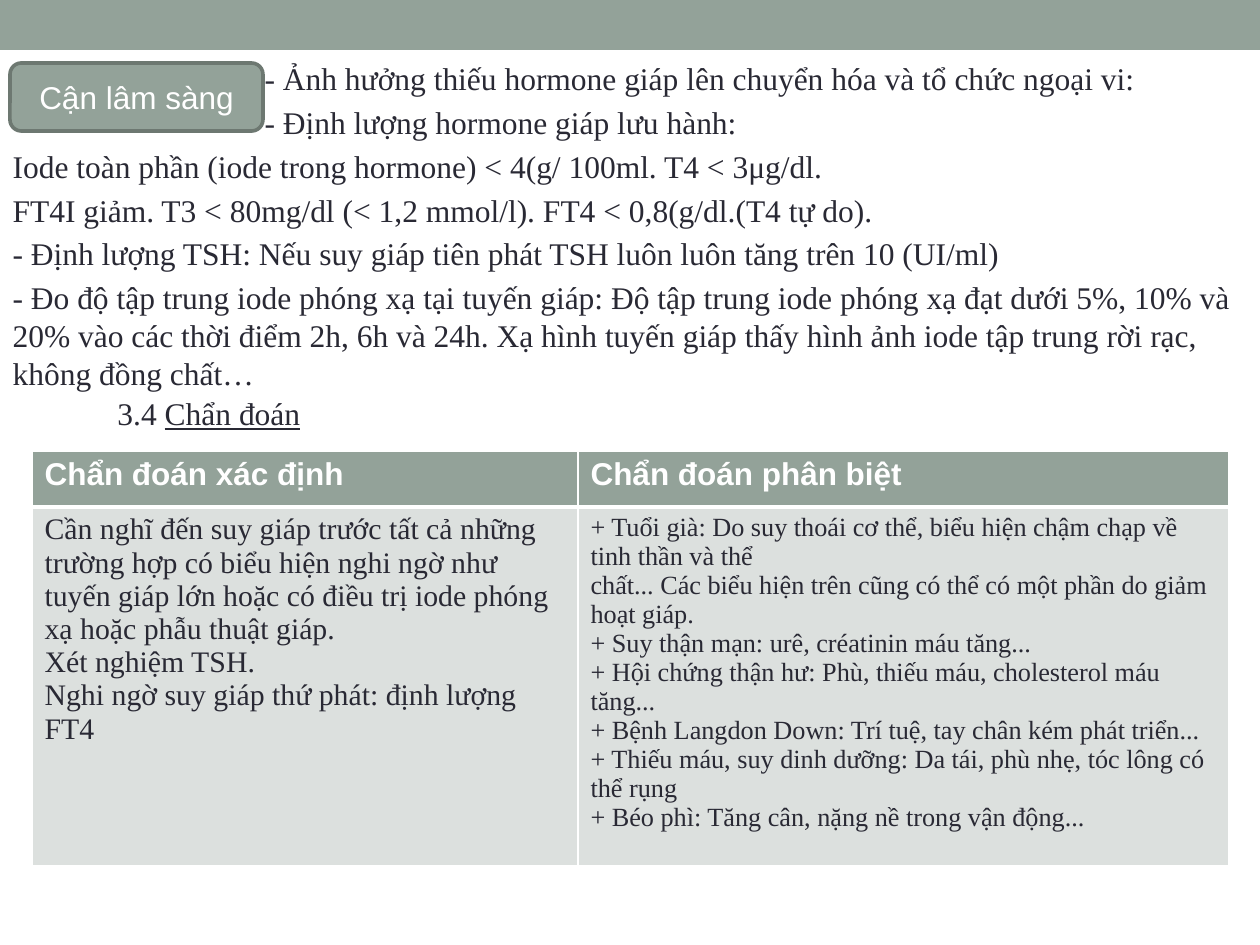
from pptx import Presentation
from pptx.dml.color import RGBColor
from pptx.enum.shapes import MSO_SHAPE as Shape
from pptx.enum.text import MSO_ANCHOR as Anchor, MSO_AUTO_SIZE as Fit, PP_ALIGN as Align
from pptx.oxml.ns import qn
from pptx.util import Pt
from lxml.etree import SubElement

SCALE = 914400 // 126
SERIF, SANS = "Times New Roman", "Arial"
SAGE, EDGE, PALE, INK, WHITE = "93A299", "6D7871", "DCE0DE", "292934", "FFFFFF"

NOTES = [
    "- Ảnh hưởng thiếu hormone giáp lên chuyển hóa và tổ chức ngoại vi:",
    "- Định lượng hormone giáp lưu hành:",
    "Iode toàn phần (iode trong hormone) < 4(g/ 100ml. T4 < 3μg/dl.",
    "FT4I giảm. T3 < 80mg/dl (< 1,2 mmol/l). FT4 < 0,8(g/dl.(T4 tự do).",
    "- Định lượng TSH: Nếu suy giáp tiên phát TSH luôn luôn tăng trên 10 (UI/ml)",
    "- Đo độ tập trung iode phóng xạ tại tuyến giáp: Độ tập trung iode phóng xạ đạt "
    "dưới 5%, 10% và 20% vào các thời điểm 2h, 6h và 24h. Xạ hình tuyến giáp thấy "
    "hình ảnh iode tập trung rời rạc, không đồng chất…",
]
HEADS = ["Chẩn đoán xác định", "Chẩn đoán phân biệt"]
SURE = [
    "Cần nghĩ đến suy giáp trước tất cả những trường hợp có biểu hiện nghi ngờ như "
    "tuyến giáp lớn hoặc có điều trị iode phóng xạ hoặc phẫu thuật giáp.",
    "Xét nghiệm TSH.",
    "Nghi ngờ suy giáp thứ phát: định lượng FT4",
]
OTHER = [
    "+ Tuổi già: Do suy thoái cơ thể, biểu hiện chậm chạp về tinh thần và thể",
    "chất... Các biểu hiện trên cũng có thể có một phần do giảm hoạt giáp.",
    "+ Suy thận mạn: urê, créatinin máu tăng...",
    "+ Hội chứng thận hư: Phù, thiếu máu, cholesterol máu tăng...",
    "+ Bệnh Langdon Down: Trí tuệ, tay chân kém phát triển...",
    "+ Thiếu máu, suy dinh dưỡng: Da tái, phù nhẹ, tóc lông có thể rụng",
    "+ Béo phì: Tăng cân, nặng nề trong vận động...",
]


def px(num):
    return num * SCALE


def box(*nums):
    return [px(num) for num in nums]


def tone(tint):
    return RGBColor.from_string(tint)


def paint(form, tint):
    form.fill.solid()
    form.fill.fore_color.rgb = tone(tint)


def style(para, size, face, tint, bold=False):
    font = para.font
    font.size, font.name, font.bold = Pt(size), face, bold
    font.color.rgb = tone(tint)


def write(frame, lines, size, face, tint, bold=False):
    frame.text = "\n".join(lines)
    for para in frame.paragraphs:
        style(para, size, face, tint, bold)


def rule(cell, **sides):
    props = cell._tc.get_or_add_tcPr()
    for spot, side in enumerate("LRTB"):
        line = SubElement(props, qn("a:ln" + side), w=str(Pt(sides.get(side, 1))))
        fill = SubElement(line, qn("a:solidFill"))
        SubElement(fill, qn("a:srgbClr"), val=WHITE)
        props.insert(spot, line)


def add_bar(slide):
    bar = slide.shapes.add_shape(Shape.RECTANGLE, *box(0, 0, 1260, 50))
    bar.shadow.inherit = False
    paint(bar, SAGE)
    bar.line.fill.background()


def add_notes(slide):
    body = slide.placeholders[1]
    body.left, body.top, body.width, body.height = box(0, 53, 1260, 368)
    frame = body.text_frame
    frame.auto_size = Fit.NONE
    write(frame, NOTES, 18, SERIF, INK)
    for row, para in enumerate(frame.paragraphs):
        para.space_before = Pt(3.4)
        para.line_spacing = 1.0
        props = para._p.get_or_add_pPr()
        props.set("marL", str(px(252 if row < 2 else 0)))
        props.set("indent", "0")
        props.insert_element_before(SubElement(props, qn("a:buNone")), "a:defRPr")


def add_badge(slide):
    badge = slide.shapes.add_shape(Shape.ROUNDED_RECTANGLE, *box(10, 63, 253, 68))
    badge.shadow.inherit = False
    paint(badge, SAGE)
    badge.line.color.rgb = tone(EDGE)
    badge.line.width = Pt(2.08)
    frame = badge.text_frame
    frame.vertical_anchor = Anchor.MIDDLE
    write(frame, ["Cận lâm sàng"], 18, SANS, WHITE)
    frame.paragraphs[0].alignment = Align.CENTER


def add_head(slide):
    frame = slide.shapes.add_textbox(*box(105, 388, 210, 50)).text_frame
    frame.word_wrap = False
    frame.auto_size = Fit.SHAPE_TO_FIT_TEXT
    para = frame.paragraphs[0]
    style(para, 18, SERIF, INK)
    para.add_run().text = "3.4 "
    term = para.add_run()
    term.text = "Chẩn đoán"
    term.font.underline = True


def add_grid(slide):
    grid = slide.shapes.add_table(2, 2, *box(32, 451, 1197, 415)).table
    for col, wide in zip(grid.columns, (546, 651)):
        col.width = px(wide)
    for row, high in zip(grid.rows, (56, 359)):
        row.height = px(high)
    for col, (head, lines, size) in enumerate(zip(HEADS, (SURE, OTHER), (17, 15))):
        top, low = grid.cell(0, col), grid.cell(1, col)
        paint(top, SAGE)
        paint(low, PALE)
        rule(top, B=3)
        rule(low, T=3)
        write(top.text_frame, [head], 18, SANS, WHITE, True)
        write(low.text_frame, lines, size, SERIF, INK)


def main():
    deck = Presentation()
    deck.slide_width, deck.slide_height = box(1260, 945)
    slide = deck.slides.add_slide(deck.slide_layouts[1])
    title = slide.shapes.title.element
    title.getparent().remove(title)
    add_bar(slide)
    add_notes(slide)
    add_badge(slide)
    add_head(slide)
    add_grid(slide)
    deck.save("out.pptx")


if __name__ == "__main__":
    main()
